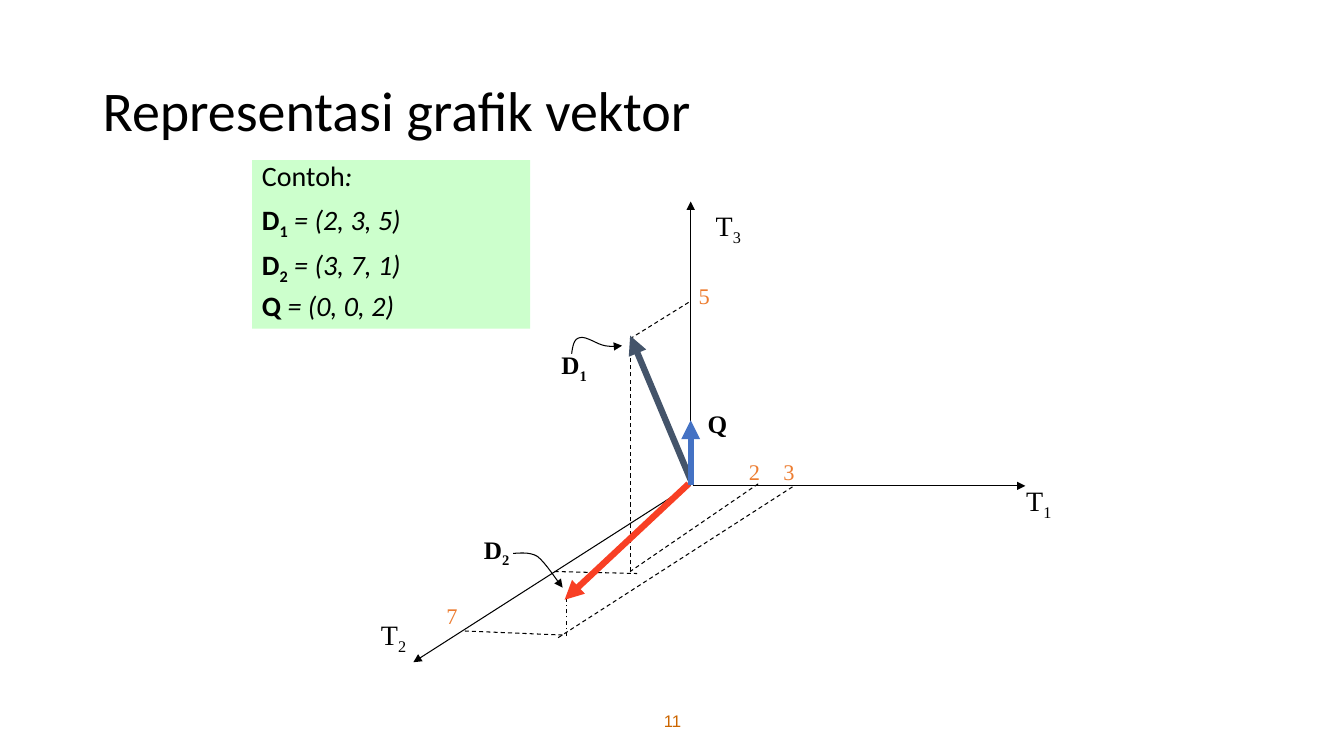
from lxml import etree
from pptx import Presentation
from pptx.dml.color import RGBColor
from pptx.enum.dml import MSO_LINE
from pptx.enum.shapes import MSO_CONNECTOR
from pptx.enum.text import MSO_ANCHOR, MSO_AUTO_SIZE, PP_ALIGN
from pptx.oxml.ns import qn
from pptx.util import Inches, Pt

DASH, DASH_DOT = MSO_LINE.DASH, MSO_LINE.DASH_DOT
SANS, SERIF, NUMBER_FONT = "Calibri", "Times New Roman", "Arial"
COLORS = {
    "ink": "000000", "panel": "CCFFCC", "tick": "ED7D31", "page": "CC6600",
    "d1": "44546A", "d2": "F83F24", "q": "4472C4",
}
THIN, THICK = 0.75, 4.5

# A run is (text, style); style letters: b bold, i italic, s subscript.
TITLE = [[("Representasi grafik vektor", "")]]
PAGE_NUMBER = [[("11", "")]]
EXAMPLE = [
    [("Contoh", ""), (":", "i")],
    [("D", "b"), ("1", "bs"), (" = (2, 3, 5)", "i")],
    [("D", "b"), ("2", "bs"), (" = (3, 7, 1)", "i")],
    [("Q", "b"), (" = (0, 0, 2)", "i")],
]

ORIGIN = (6.85, 4.81)
D1_FOOT, D2_FOOT = (6.25, 5.67), (5.62, 6.31)
AXES = [((6.87, 4.82), (10.17, 4.82)), (ORIGIN, (4.1, 6.57)), (ORIGIN, (6.85, 2))]
PROJECTIONS = [
    ((7.52, 4.8), D1_FOOT, DASH),
    ((5.5, 5.67), (6.32, 5.69), DASH),
    (D1_FOOT, (6.25, 3.5), DASH),
    ((7.86, 4.83), (5.53, 6.33), DASH),
    ((5.58, 6.3), (4.61, 6.26), DASH),
    (D2_FOOT, (5.62, 5.92), DASH_DOT),
    ((6.83, 3), (6.25, 3.36), DASH),
]
VECTORS = [
    ((6.85, 4.76), (6.25, 3.33), "d1"),
    ((6.83, 4.8), (5.6, 5.95), "d2"),
    (ORIGIN, (6.85, 4.17), "q"),
]
# Each pointer is a start point and cubic Bezier pieces (control, control, end).
POINTERS = [
    ((5.67, 3.51), [((5.68, 3.44), (5.69, 3.36), (5.75, 3.35)),
                    ((5.81, 3.33), (5.93, 3.42), (6, 3.43)),
                    ((6.07, 3.44), (6.12, 3.44), (6.17, 3.43))]),
    ((5.09, 5.49), [((5.13, 5.49), (5.25, 5.47), (5.33, 5.52)),
                    ((5.41, 5.58), (5.53, 5.77), (5.58, 5.83))]),
]
# Letter, subscript, left, top, width
AXIS_NAMES = [("T", "3", 7, 2.02, 0.47), ("T", "1", 10.08, 4.75, 0.47),
              ("T", "2", 3.68, 6.08, 0.47)]
VECTOR_NAMES = [("D", "1", 5.47, 3.42, 0.47), ("D", "2", 4.7, 5.25, 0.51),
                ("Q", "", 6.92, 4, 0.4)]
TICKS = [("7", "", 4.33, 5.92, 0.31), ("3", "", 7.67, 4.5, 0.31),
         ("2", "", 7.33, 4.5, 0.31), ("5", "", 6.83, 2.75, 0.31)]
# Names, height, size, colour, style
LABEL_SETS = [(AXIS_NAMES, 0.44, 20, "ink", ""), (VECTOR_NAMES, 0.4, 18, "ink", "b"),
              (TICKS, 0.37, 16, "tick", "")]
CURVE_STEPS = 8


def rgb(name):
    return RGBColor.from_string(COLORS[name])


def add_text(slide, box, paragraphs, size, font, color="ink", wrap=True,
             anchor=MSO_ANCHOR.TOP, align=PP_ALIGN.LEFT, spacing=None, before=0):
    holder = slide.shapes.add_textbox(*map(Inches, box))
    frame = holder.text_frame
    frame.word_wrap = wrap
    frame.auto_size = MSO_AUTO_SIZE.NONE if wrap else MSO_AUTO_SIZE.SHAPE_TO_FIT_TEXT
    frame.vertical_anchor = anchor
    for index, runs in enumerate(paragraphs):
        paragraph = frame.add_paragraph() if index else frame.paragraphs[0]
        paragraph.alignment = align
        if spacing:
            paragraph.line_spacing = spacing
        if index:
            paragraph.space_before = Pt(before)
        for text, style in runs:
            run = paragraph.add_run()
            run.text = text
            run.font.size, run.font.name = Pt(size), font
            run.font.color.rgb = rgb(color)
            run.font.bold, run.font.italic = "b" in style, "i" in style
            if "s" in style:
                run.font._element.set("baseline", "-25000")
    return holder


def style_line(shape, color, width, dash=None, arrow=False):
    shape.line.color.rgb = rgb(color)
    shape.line.width = Pt(width)
    if dash:
        shape.line.dash_style = dash
    if arrow:
        etree.SubElement(shape.line._get_or_add_ln(), qn("a:tailEnd"), type="triangle")


def add_line(slide, start, end, color="ink", width=THIN, dash=None, arrow=False):
    line = slide.shapes.add_connector(MSO_CONNECTOR.STRAIGHT, *map(Inches, start + end))
    style_line(line, color, width, dash, arrow)
    etree.SubElement(line._element.spPr, qn("a:effectLst"))


def bezier_point(corners, t):
    weights = ((1 - t) ** 3, 3 * t * (1 - t) ** 2, 3 * t * t * (1 - t), t ** 3)
    return tuple(Inches(sum(w * c[axis] for w, c in zip(weights, corners)))
                 for axis in (0, 1))


def add_pointer(slide, start, pieces):
    points, here = [], start
    for piece in pieces:
        points += [bezier_point((here, *piece), step / CURVE_STEPS)
                   for step in range(1, CURVE_STEPS + 1)]
        here = piece[-1]
    builder = slide.shapes.build_freeform(*map(Inches, start))
    builder.add_line_segments(points, close=False)
    curve = builder.convert_to_shape()
    curve.fill.background()
    curve.shadow.inherit = False
    style_line(curve, "ink", THIN, arrow=True)


def main():
    deck = Presentation()
    deck.slide_width, deck.slide_height = Inches(13.33), Inches(7.5)
    slide = deck.slides.add_slide(deck.slide_layouts[6])

    add_text(slide, (4.42, 6.95, 4.5, 0.4), PAGE_NUMBER, 12, NUMBER_FONT, "page",
             anchor=MSO_ANCHOR.MIDDLE, align=PP_ALIGN.CENTER)
    add_text(slide, (0.92, 0.4, 11.5, 1.45), TITLE, 40, SANS,
             anchor=MSO_ANCHOR.MIDDLE, spacing=0.9)
    panel = add_text(slide, (2.5, 1.59, 2.76, 1.67), EXAMPLE, 20, SANS,
                     spacing=0.8, before=10)
    panel.fill.solid()
    panel.fill.fore_color.rgb = rgb("panel")

    for start, end in AXES:
        add_line(slide, start, end, arrow=True)
    for start, end, dash in PROJECTIONS:
        add_line(slide, start, end, dash=dash)
    for start, end, color in VECTORS:
        add_line(slide, start, end, color, THICK, arrow=True)
    for start, pieces in POINTERS:
        add_pointer(slide, start, pieces)

    for names, height, size, color, style in LABEL_SETS:
        for letter, index, left, top, width in names:
            runs = [(letter, style)] + ([(index, style + "s")] if index else [])
            add_text(slide, (left, top, width, height), [runs], size, SERIF, color,
                     wrap=False)

    deck.save("out.pptx")


if __name__ == "__main__":
    main()
